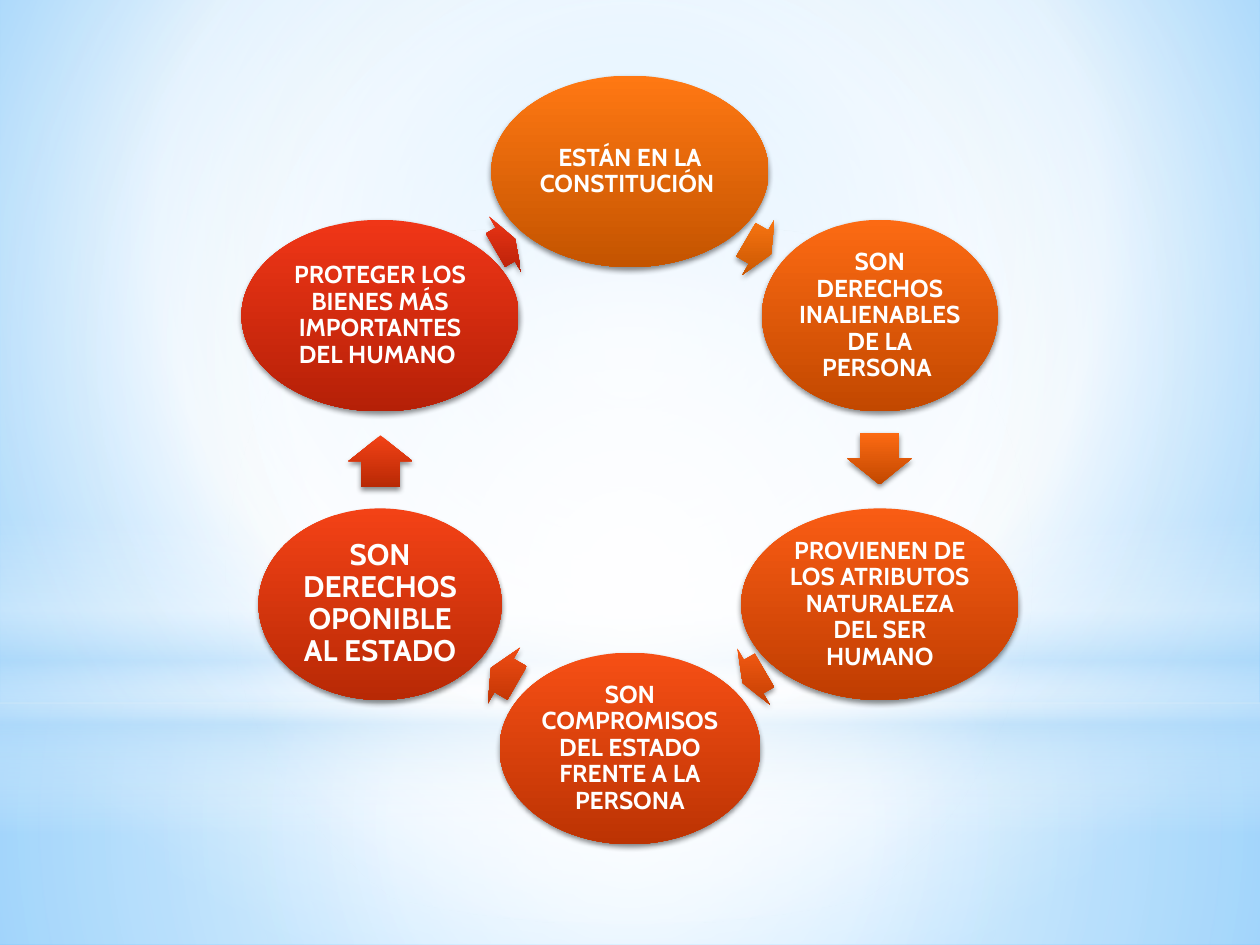
from math import cos, radians, sin

from lxml.etree import SubElement as Sub
from pptx import Presentation
from pptx.dml.color import RGBColor as RGB
from pptx.enum.shapes import MSO_SHAPE as Kind
from pptx.enum.text import MSO_ANCHOR as Anchor, PP_ALIGN as Align
from pptx.oxml.ns import qn
from pptx.util import Inches, Pt

WHITE = RGB(0xFF, 0xFF, 0xFF)
BLACK = RGB(0, 0, 0)
PALE = RGB(0xB4, 0xDC, 0xFA)
SKY = RGB(0x9E, 0xD5, 0xFF)
BLUE = RGB(0x5B, 0xB9, 0xFF)
TONES = [
    (RGB(0xFF, 0x78, 0x13), RGB(0xC4, 0x54, 0x00)),
    (RGB(0xFC, 0x6A, 0x13), RGB(0xC2, 0x48, 0x00)),
    (RGB(0xF9, 0x5C, 0x14), RGB(0xBF, 0x3D, 0x01)),
    (RGB(0xF6, 0x4F, 0x15), RGB(0xBC, 0x33, 0x03)),
    (RGB(0xF3, 0x42, 0x16), RGB(0xB8, 0x29, 0x05)),
    (RGB(0xF0, 0x36, 0x17), RGB(0xB5, 0x20, 0x07)),
]
STEPS = [
    ("ESTÁN EN LA CONSTITUCIÓN ", 2.2, 14, (6.02, 1.96, 0.23)),
    ("SON DERECHOS INALIENABLES DE LA PERSONA ", 1.87, 14, (6.98, 3.64, 0.41)),
    ("PROVIENEN DE LOS ATRIBUTOS NATURALEZA DEL SER HUMANO", 2.2, 14,
     (5.98, 5.37, 0.2)),
    ("SON COMPROMISOS DEL ESTADO FRENTE A LA PERSONA", 2.07, 14,
     (4, 5.36, 0.24)),
    ("SON DERECHOS OPONIBLE AL ESTADO", 1.93, 17, (3.02, 3.66, 0.41)),
    ("PROTEGER LOS BIENES MÁS IMPORTANTES DEL HUMANO ", 2.2, 14,
     (4.01, 1.94, 0.18)),
]
MID = (50, 50, 50, 50)


class Deck:
    """Draws the elements of one slide in a shared style."""

    font = "Cabin"

    def __init__(self, pres):
        self.slide = pres.slides.add_slide(pres.slide_layouts[6])

    def tint(self, node, color, alpha=100):
        clr = Sub(node, qn("a:srgbClr"), val=str(color))
        if alpha < 100:
            Sub(clr, qn("a:alpha"), val=str(alpha * 1000))

    def grade(self, owner, fill, stops, focus=None):
        fill.gradient()
        grad = owner.find(".//" + qn("a:gradFill"))
        for child in list(grad):
            grad.remove(child)
        grad.set("rotWithShape", "0")
        row = Sub(grad, qn("a:gsLst"))
        for pos, *tone in stops:
            self.tint(Sub(row, qn("a:gs"), pos=str(pos * 1000)), *tone)
        if focus:
            ring = Sub(grad, qn("a:path"), path="circle")
            edges = {k: str(v * 1000) for k, v in zip("ltrb", focus)}
            Sub(ring, qn("a:fillToRect"), **edges)
        else:
            Sub(grad, qn("a:lin"), ang="5400000", scaled="0")

    def back(self, stops, focus):
        self.grade(self.slide.element, self.slide.background.fill, stops, focus)

    def shape(self, kind, box, stops, focus=None):
        item = self.slide.shapes.add_shape(kind, *map(Inches, box))
        self.grade(item.element, item.fill, stops, focus)
        item.line.fill.background()
        item.shadow.inherit = False
        return item

    def solid(self, kind, x, y, wide, high, tones):
        box = (x - wide / 2, y - high / 2, wide, high)
        item = self.shape(kind, box, [(0, tones[0]), (100, tones[1])])
        glow = Sub(item.element.find(".//" + qn("a:effectLst")),
                   qn("a:outerShdw"), blurRad=str(Pt(3.1)), dist=str(Pt(1.8)),
                   dir="5400000", rotWithShape="0")
        self.tint(glow, BLACK, 45)
        return item

    def oval(self, x, y, wide, text, size, tones):
        frame = self.solid(Kind.OVAL, x, y, wide, 1.52, tones).text_frame
        frame.word_wrap = True
        frame.vertical_anchor = Anchor.MIDDLE
        frame.margin_left = frame.margin_right = Inches(0.02)
        frame.margin_top = frame.margin_bottom = Inches(0.02)
        frame.text = text
        para = frame.paragraphs[0]
        para.alignment = Align.CENTER
        para.line_spacing = 0.9
        font = para.runs[0].font
        font.name, font.size, font.bold = self.font, Pt(size), True
        font.color.rgb = WHITE

    def arrow(self, x, y, wide, turn, tones):
        item = self.solid(Kind.RIGHT_ARROW, x, y, wide, 0.51, tones)
        item.adjustments[0] = 0.6
        item.adjustments[1] = 0.5
        item.rotation = turn


def main():
    pres = Presentation()
    pres.slide_width, pres.slide_height = Inches(10), Inches(7.5)
    deck = Deck(pres)
    deck.back([(0, SKY), (60, WHITE), (100, BLUE)], (20, 10, 20, 60))
    deck.shape(Kind.RECTANGLE, (0, 5.58, 10, 1.92),
               [(0, WHITE, 91), (37, WHITE, 76), (100, PALE, 79)], MID)
    deck.shape(Kind.RECTANGLE, (0, 0, 10, 5.58),
               [(0, WHITE, 89), (48, WHITE, 62), (100, PALE, 79)], MID)
    deck.shape(Kind.RECTANGLE, (0, 4.12, 10, 2.5),
               [(0, WHITE, 0), (29, WHITE, 30), (45, PALE, 40),
                (55, WHITE, 26), (65, PALE, 60), (100, WHITE, 0)])
    deck.shape(Kind.OVAL, (0, 1.75, 10, 5.58),
               [(0, WHITE), (56, WHITE, 0)], MID)

    for i, (text, wide, size, (x, y, span)) in enumerate(STEPS):
        turn = radians(60 * i)
        deck.oval(5 + 2.29 * sin(turn), 3.65 - 2.29 * cos(turn),
                  wide, text, size, TONES[i])
        deck.arrow(x, y, span, 30 + 60 * i, TONES[i])
    pres.save("out.pptx")


if __name__ == "__main__":
    main()
